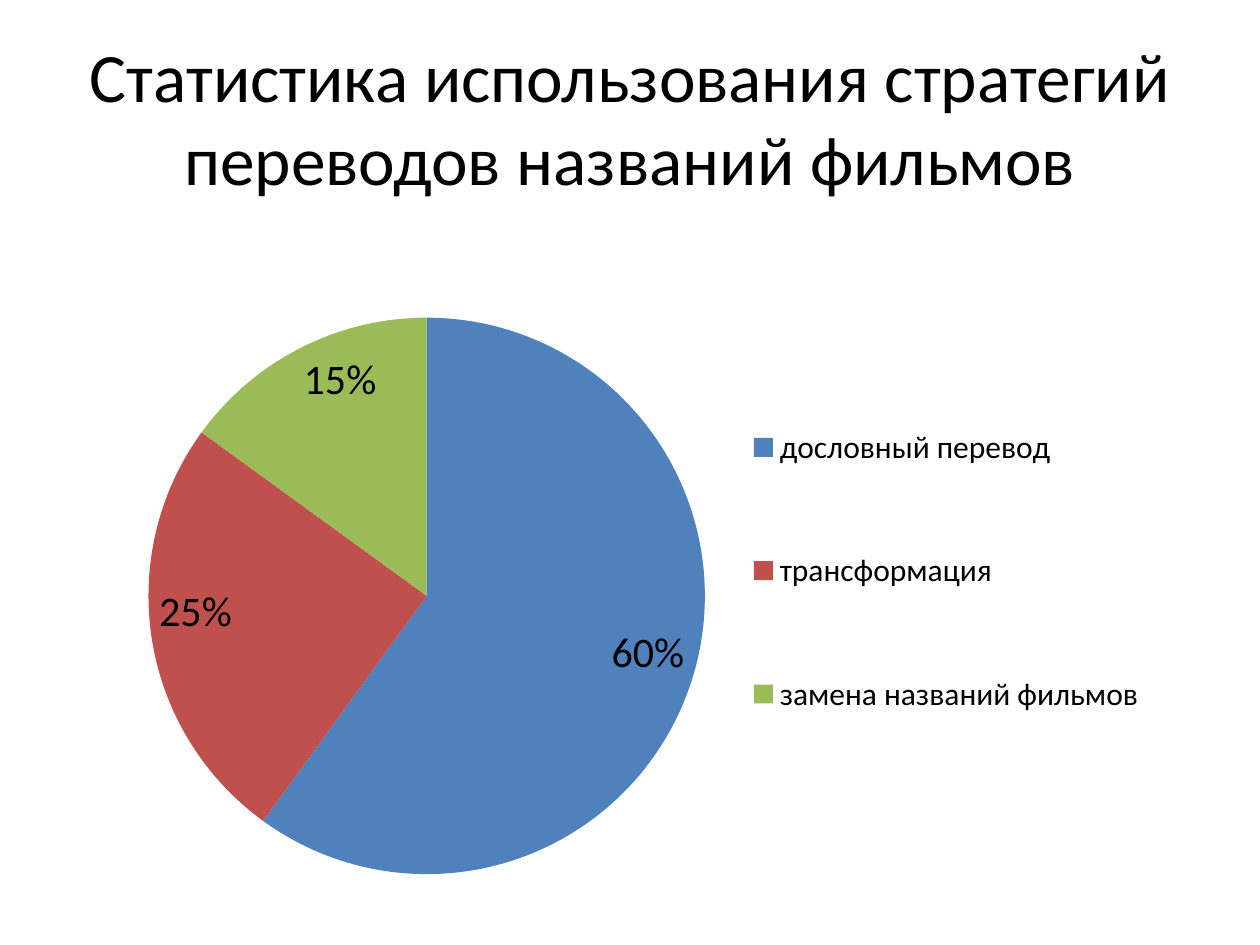
"""Build a slide with a pie chart of film title translation strategies."""
from lxml.etree import SubElement
from pptx import Presentation
from pptx.chart.data import CategoryChartData
from pptx.dml.color import RGBColor
from pptx.enum.chart import XL_CHART_TYPE, XL_LABEL_POSITION, XL_LEGEND_POSITION
from pptx.enum.text import MSO_ANCHOR, PP_ALIGN
from pptx.oxml.ns import qn
from pptx.util import Cm, Pt

BLACK = RGBColor(0x00, 0x00, 0x00)
BLUE = RGBColor(0x4F, 0x81, 0xBD)
RED = RGBColor(0xC0, 0x50, 0x4D)
GREEN = RGBColor(0x9B, 0xBB, 0x59)
FONT = "Calibri"


def set_layout(layout, **fractions):
    """Place a chart part by fractions of the chart's size."""
    for child in list(layout):
        layout.remove(child)
    manual = SubElement(layout, qn("c:manualLayout"))
    for name, value in fractions.items():
        SubElement(manual, qn(f"c:{name}")).set("val", str(value))


def set_font(font, size):
    """Apply the common typeface and colour at a given size."""
    font.name = FONT
    font.size = Pt(size)
    font.color.rgb = BLACK


presentation = Presentation()
presentation.slide_width = Cm(25.4)
presentation.slide_height = Cm(19.05)
slide = presentation.slides.add_slide(presentation.slide_layouts[5])

title = slide.shapes.title
title.left, title.top, title.width, title.height = Cm(1.27), Cm(0.76), Cm(22.86), Cm(3.18)
title.text_frame.text = "Статистика использования стратегий переводов названий фильмов"
title.text_frame.word_wrap = True
title.text_frame.vertical_anchor = MSO_ANCHOR.MIDDLE
paragraph = title.text_frame.paragraphs[0]
paragraph.alignment = PP_ALIGN.CENTER
set_font(paragraph.font, 39.6)

chart_data = CategoryChartData(number_format="0%")
chart_data.categories = ["дословный перевод", "трансформация", "замена названий фильмов"]
chart_data.add_series("Series 1", [0.6, 0.25, 0.15])
chart = slide.shapes.add_chart(
    XL_CHART_TYPE.PIE, Cm(1.91), Cm(5.13), Cm(21.59), Cm(12.75), chart_data
).chart
chart.has_title = False
set_font(chart.font, 10)

plot = chart.plots[0]
plot.vary_by_categories = True
for index, color in enumerate([BLUE, RED, GREEN]):
    fill = plot.series[0].points[index].format.fill
    fill.solid()
    fill.fore_color.rgb = color

labels = plot.series[0].data_labels
labels.show_value = True
labels.number_format = "0%"
labels.number_format_is_linked = False
labels.position = XL_LABEL_POSITION.INSIDE_END
set_font(labels.font, 24)

chart.has_legend = True
legend = chart.legend
legend.position = XL_LEGEND_POSITION.RIGHT
legend.include_in_layout = False
set_font(legend.font, 18)

plot_area = chart.element.chart.plotArea
plot_layout = plot_area.find(qn("c:layout"))
if plot_layout is None:
    plot_layout = SubElement(plot_area, qn("c:layout"))
    plot_area.insert(0, plot_layout)
set_layout(plot_layout, layoutTarget="inner", xMode="edge", yMode="edge",
           x=0.05, y=0.1, w=0.52, h=0.88)

legend_element = chart.element.chart.find(qn("c:legend"))
legend_layout = legend_element.find(qn("c:layout"))
if legend_layout is None:
    legend_layout = SubElement(legend_element, qn("c:layout"))
    legend_element.find(qn("c:legendPos")).addnext(legend_layout)
set_layout(legend_layout, xMode="edge", yMode="edge", x=0.6, y=0.14, w=0.39, h=0.72)

presentation.save("out.pptx")
